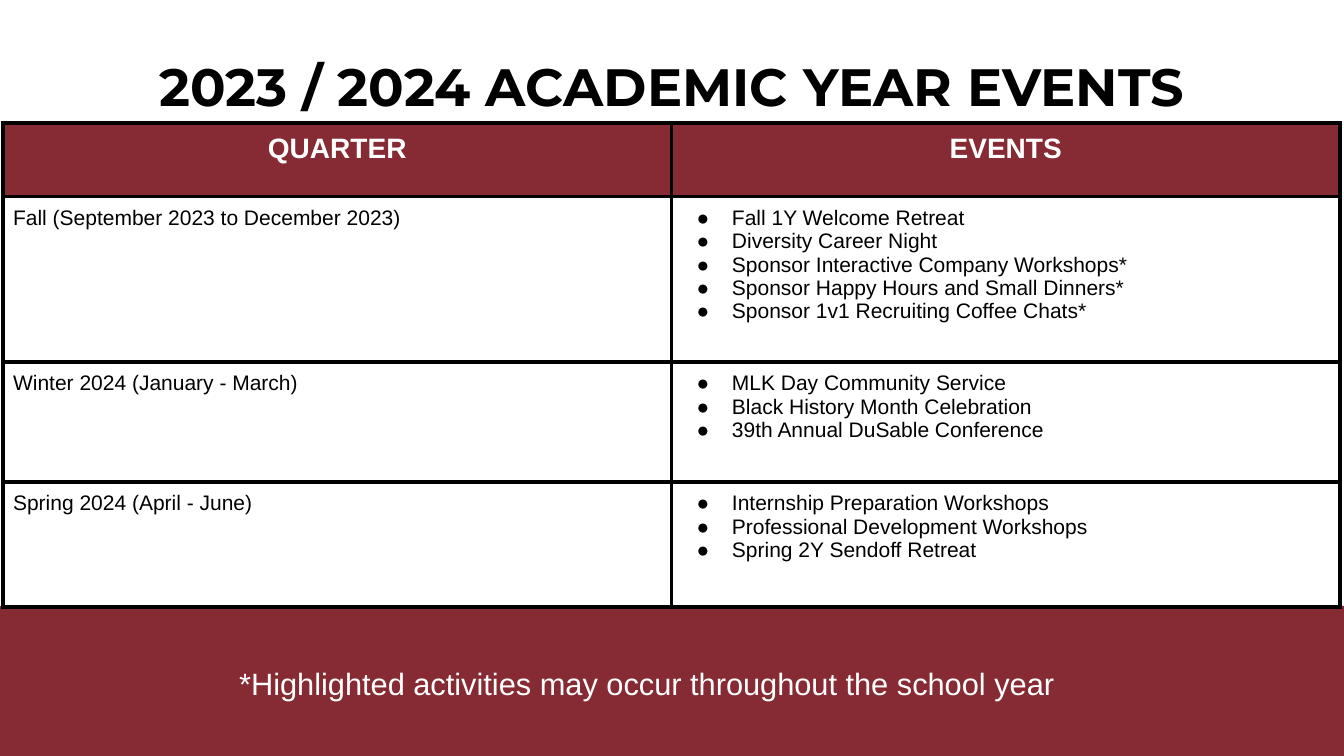
"""Build the academic year events slide with a quarter-by-quarter table."""
import pptx
import pptx.dml.color
import pptx.enum.shapes
import pptx.enum.text
import pptx.oxml
import pptx.oxml.ns
import pptx.util

Inches = pptx.util.Inches
Pt = pptx.util.Pt
ALIGN = pptx.enum.text.PP_ALIGN
MAROON = pptx.dml.color.RGBColor(0x86, 0x2A, 0x33)
BLACK = pptx.dml.color.RGBColor(0, 0, 0)
WHITE = pptx.dml.color.RGBColor(0xFF, 0xFF, 0xFF)

TITLE = "2023 / 2024 ACADEMIC YEAR EVENTS"
FOOTNOTE = "*Highlighted activities may occur throughout the school year"
HEADERS = ["QUARTER", "EVENTS"]
QUARTERS = [
    ("Fall (September 2023 to December 2023)", [
        "Fall 1Y Welcome Retreat",
        "Diversity Career Night",
        "Sponsor Interactive Company Workshops*",
        "Sponsor Happy Hours and Small Dinners*",
        "Sponsor 1v1 Recruiting Coffee Chats*",
    ]),
    ("Winter 2024 (January - March)", [
        "MLK Day Community Service",
        "Black History Month Celebration",
        "39th Annual DuSable Conference",
    ]),
    ("Spring 2024 (April - June)", [
        "Internship Preparation Workshops",
        "Professional Development Workshops",
        "Spring 2Y Sendoff Retreat",
    ]),
]

SLIDE_WIDTH, SLIDE_HEIGHT = 13.33, 7.5
BAND_TOP = 6.01
TABLE_LEFT, TABLE_TOP = 0.03, 1.22
COLUMN_WIDTH = 6.63
ROW_HEIGHTS = [0.73, 1.64, 1.19, 1.24]
BORDER_WIDTH = 3
BULLET_INDENT, BULLET_HANGING = 0.5, -0.35

TITLE_FONT = {"name": "Montserrat", "size": Pt(37.5), "bold": True}
FOOTNOTE_FONT = {"name": "Arial", "size": Pt(22), "bold": False}
HEADER_FONT = {"name": "Arial", "size": Pt(20), "bold": True}
BODY_FONT = {"name": "Arial", "size": Pt(15), "bold": False}


def write_paragraph(paragraph, text, font_format, color, alignment):
    """Put one formatted run in a paragraph."""
    paragraph.alignment = alignment
    run = paragraph.add_run()
    run.text = text
    for name, value in font_format.items():
        setattr(run.font, name, value)
    run.font.color.rgb = color


def add_text(slide, box, text, font_format, color, margins):
    """Add a centred text box and return its text frame."""
    frame = slide.shapes.add_textbox(*map(Inches, box)).text_frame
    frame.word_wrap = True
    for side, margin in zip(("left", "top", "right", "bottom"), margins):
        setattr(frame, f"margin_{side}", Inches(margin))
    write_paragraph(frame.paragraphs[0], text, font_format, color, ALIGN.CENTER)
    return frame


def add_bullet(paragraph):
    """Give a paragraph a hanging black bullet."""
    properties = paragraph._p.get_or_add_pPr()
    properties.set("marL", str(Inches(BULLET_INDENT)))
    properties.set("indent", str(Inches(BULLET_HANGING)))
    namespace = pptx.oxml.ns.nsdecls("a")
    for xml in (
        f'<a:buClr {namespace}><a:srgbClr val="{BLACK}"/></a:buClr>',
        f'<a:buFont {namespace} typeface="Arial"/>',
        f'<a:buChar {namespace} char="●"/>',
    ):
        properties.append(pptx.oxml.parse_xml(xml))


def add_borders(cell):
    """Draw a solid black line on all four sides of a cell."""
    properties = cell._tc.get_or_add_tcPr()
    for side in "LRTB":
        properties.append(pptx.oxml.parse_xml(
            f'<a:ln{side} {pptx.oxml.ns.nsdecls("a")} w="{Pt(BORDER_WIDTH)}">'
            f'<a:solidFill><a:srgbClr val="{BLACK}"/></a:solidFill></a:ln{side}>'))


def fill_cell(cell, lines, is_header, is_bulleted):
    """Write a table cell with its lines, borders and fill."""
    for side in ("left", "top", "right", "bottom"):
        setattr(cell, f"margin_{side}", Inches(0.1))
    add_borders(cell)
    if is_header:
        cell.fill.solid()
        cell.fill.fore_color.rgb = MAROON
        style = (HEADER_FONT, WHITE, ALIGN.CENTER)
    else:
        cell.fill.background()
        style = (BODY_FONT, BLACK, ALIGN.LEFT)
    frame = cell.text_frame
    for index, line in enumerate(lines):
        paragraph = frame.add_paragraph() if index else frame.paragraphs[0]
        write_paragraph(paragraph, line, *style)
        if is_bulleted:
            add_bullet(paragraph)


def add_events_table(slide):
    """Add the table of quarters and their events."""
    rows = [[[header] for header in HEADERS]]
    rows += [[[quarter], events] for quarter, events in QUARTERS]
    table = slide.shapes.add_table(
        len(rows), len(HEADERS), Inches(TABLE_LEFT), Inches(TABLE_TOP),
        Inches(COLUMN_WIDTH * len(HEADERS)), Inches(sum(ROW_HEIGHTS))).table
    table.horz_banding = False
    for column in table.columns:
        column.width = Inches(COLUMN_WIDTH)
    for row_index, (height, row) in enumerate(zip(ROW_HEIGHTS, rows)):
        table.rows[row_index].height = Inches(height)
        for column_index, lines in enumerate(row):
            is_header = row_index == 0
            is_bulleted = not is_header and column_index == 1
            fill_cell(table.cell(row_index, column_index), lines, is_header, is_bulleted)


def main():
    """Create and save the presentation."""
    presentation = pptx.Presentation()
    presentation.slide_width = Inches(SLIDE_WIDTH)
    presentation.slide_height = Inches(SLIDE_HEIGHT)
    slide = presentation.slides.add_slide(presentation.slide_layouts[6])

    title = add_text(slide, (0, 0.42, SLIDE_WIDTH, 0.62), TITLE, TITLE_FONT, BLACK, (0, 0, 0, 0))
    title.paragraphs[0].line_spacing = 1.18

    band = slide.shapes.add_shape(
        pptx.enum.shapes.MSO_SHAPE.RECTANGLE, 0, Inches(BAND_TOP),
        Inches(SLIDE_WIDTH), Inches(SLIDE_HEIGHT - BAND_TOP))
    band.shadow.inherit = False
    band.fill.solid()
    band.fill.fore_color.rgb = MAROON
    band.line.fill.background()

    footnote = add_text(slide, (0.57, 6.55, 11.69, 0.47), FOOTNOTE, FOOTNOTE_FONT, WHITE,
                        (0.1, 0.05, 0.1, 0.05))
    footnote.auto_size = pptx.enum.text.MSO_AUTO_SIZE.SHAPE_TO_FIT_TEXT
    add_events_table(slide)
    presentation.save("out.pptx")


if __name__ == "__main__":
    main()
